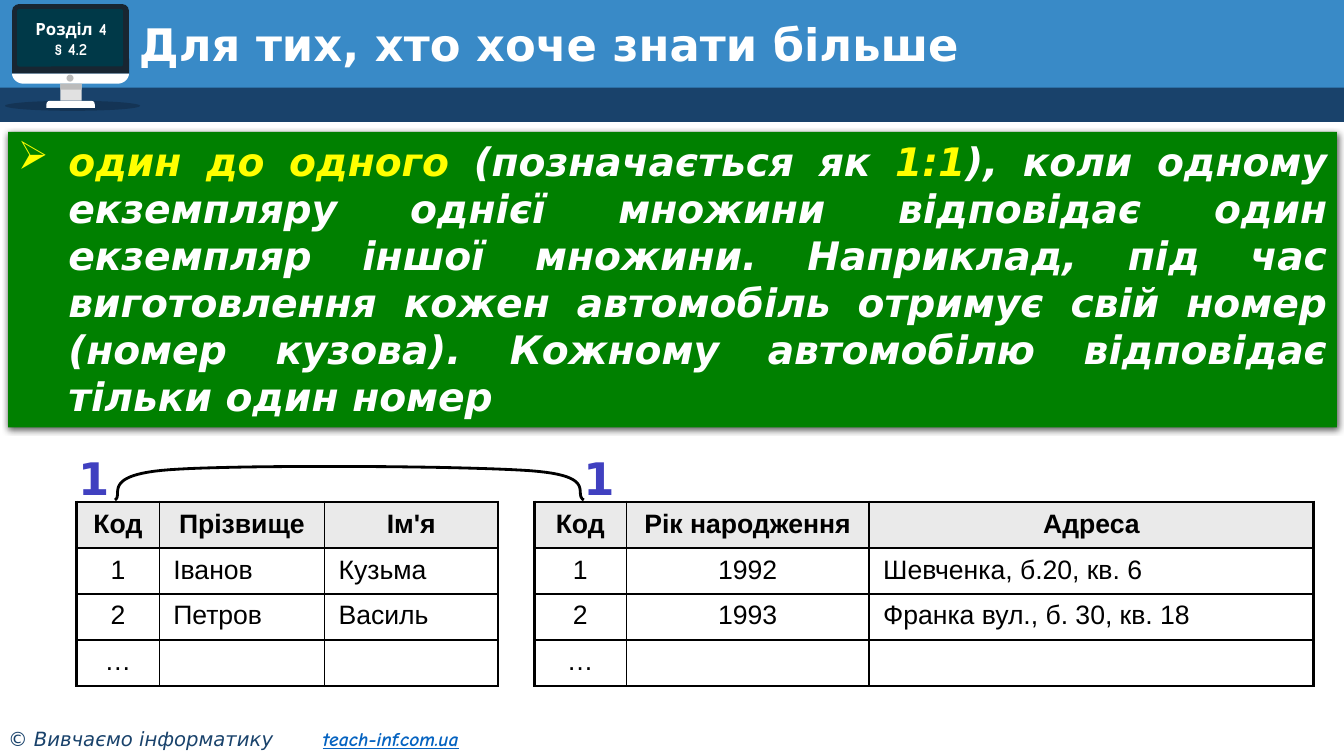
from lxml.etree import SubElement
from pptx import Presentation
from pptx.dml.color import RGBColor
from pptx.enum.shapes import MSO_SHAPE
from pptx.enum.text import MSO_ANCHOR, PP_ALIGN
from pptx.oxml import parse_xml
from pptx.oxml.ns import nsdecls, qn
from pptx.util import Inches, Pt

BLACK = RGBColor(0x00, 0x00, 0x00)
WHITE = RGBColor(0xFF, 0xFF, 0xFF)
SKY = RGBColor(0x39, 0x8A, 0xC7)
NAVY = RGBColor(0x19, 0x42, 0x6B)
FRAME = RGBColor(0x18, 0x26, 0x32)
SCREEN = RGBColor(0x00, 0x39, 0x48)
STAND = RGBColor(0xE1, 0xE1, 0xE1)
GRAY = RGBColor(0xBB, 0xBB, 0xBB)
GREEN = RGBColor(0x00, 0x80, 0x00)
YELLOW = RGBColor(0xFF, 0xFF, 0x00)
LINK = RGBColor(0x05, 0x63, 0xC1)
VIOLET = RGBColor(0x40, 0x40, 0xC0)
HEADER = RGBColor(0xEA, 0xEA, 0xEA)
SANS, COMIC, ARIAL = "DejaVu Sans", "Comic Neue", "Arial"


def add_shape(s, kind, x, y, w, h, fill, adjustments=()):
    sp = s.shapes.add_shape(kind, Inches(x), Inches(y), Inches(w), Inches(h))
    sp.shadow.inherit = False
    sp.fill.solid()
    sp.fill.fore_color.rgb = fill
    sp.line.fill.background()
    for i, value in enumerate(adjustments):
        sp.adjustments[i] = value
    return sp


def add_text_frame(s, x, y, w, h, anchor=MSO_ANCHOR.TOP, wrap=True):
    tf = s.shapes.add_textbox(Inches(x), Inches(y), Inches(w), Inches(h)).text_frame
    tf.word_wrap = wrap
    tf.vertical_anchor = anchor
    return tf


def add_run(p, text, size, font, color, bold=False, italic=False, underline=False):
    r = p.add_run()
    r.text = text
    r.font.size = Pt(size)
    r.font.name = font
    r.font.color.rgb = color
    r.font.bold = bold
    r.font.italic = italic
    r.font.underline = underline


def curve(start, control1, control2, end, steps=24):
    points = []
    for i in range(steps + 1):
        t = i / steps
        weights = ((1 - t) ** 3, 3 * t * (1 - t) ** 2, 3 * t ** 2 * (1 - t), t ** 3)
        corners = (start, control1, control2, end)
        points.append(tuple(sum(k * c[axis] for k, c in zip(weights, corners))
                            for axis in (0, 1)))
    return points


def add_outline(s, x, y, points, close):
    spots = [(Inches(x + px), Inches(y + py)) for px, py in points]
    builder = s.shapes.build_freeform(*spots[0], scale=1.0)
    builder.add_line_segments(spots[1:], close=close)
    sp = builder.convert_to_shape()
    sp.shadow.inherit = False
    return sp


def add_monitor(s, x, y):
    rounded_top = MSO_SHAPE.ROUND_2_SAME_RECTANGLE
    shade = add_shape(s, MSO_SHAPE.OVAL, x, y + 0.96, 1.34, 0.1, BLACK)
    color = shade.fill._xPr.find(qn("a:solidFill"))[0]
    SubElement(color, qn("a:alpha")).set("val", "20000")
    add_shape(s, rounded_top, x + 0.07, y, 1.16, 0.69, FRAME, (0.1, 0))
    chin = (curve((0, 0), (0, 0.05), (0.05, 0.1), (0.11, 0.1))
            + curve((1.05, 0.1), (1.11, 0.1), (1.16, 0.05), (1.16, 0)))
    sp = add_outline(s, x + 0.07, y + 0.69, chin, True)
    sp.fill.solid()
    sp.fill.fore_color.rgb = WHITE
    sp.line.fill.background()
    add_shape(s, MSO_SHAPE.RECTANGLE, x + 0.55, y + 0.79, 0.21, 0.17, STAND)
    add_shape(s, MSO_SHAPE.RECTANGLE, x + 0.55, y + 0.79, 0.21, 0.06, GRAY)
    add_shape(s, rounded_top, x + 0.41, y + 0.96, 0.48, 0.07, WHITE, (0.5, 0))
    add_shape(s, MSO_SHAPE.OVAL, x + 0.61, y + 0.7, 0.07, 0.07, GRAY)
    add_shape(s, MSO_SHAPE.ROUNDED_RECTANGLE, x + 0.12, y + 0.05, 1.05, 0.57,
              SCREEN, (0.036,))
    tf = add_text_frame(s, x + 0.08, y + 0.05, 1.15, 0.59, MSO_ANCHOR.MIDDLE)
    for p, text in ((tf.paragraphs[0], "Розділ 4"), (tf.add_paragraph(), "§ 4.2")):
        p.alignment = PP_ALIGN.CENTER
        add_run(p, text, 12, COMIC, WHITE, bold=True)


def add_header(s, x, y, w):
    add_shape(s, MSO_SHAPE.RECTANGLE, x, y, w, 0.91, SKY)
    add_shape(s, MSO_SHAPE.RECTANGLE, x, y + 0.87, w, 0.34, NAVY)
    add_monitor(s, x + 0.05, y + 0.04)
    tf = add_text_frame(s, x + 1.28, y + 0.18, 11.72, 0.58, MSO_ANCHOR.MIDDLE)
    p = tf.paragraphs[0]
    p.line_spacing = 0.9
    add_run(p, "Для тих, хто хоче знати більше", 32, SANS, WHITE, bold=True)


def add_definition(s, x, y, w, h):
    sp = add_shape(s, MSO_SHAPE.RECTANGLE, x, y, w, h, GREEN)
    sp._element.spPr.find(qn("a:effectLst")).append(parse_xml(
        f'<a:outerShdw {nsdecls("a")} blurRad="{Pt(4.5)}" dist="{Pt(1.5)}" dir="5400000" '
        'algn="t" rotWithShape="0"><a:srgbClr val="000000"><a:alpha val="63000"/>'
        '</a:srgbClr></a:outerShdw>'))
    tf = sp.text_frame
    tf.word_wrap = True
    tf.vertical_anchor = MSO_ANCHOR.TOP
    p = tf.paragraphs[0]
    p.alignment = PP_ALIGN.JUSTIFY
    pPr = p._p.get_or_add_pPr()
    pPr.set("marL", str(Inches(0.5)))
    pPr.set("indent", str(-Inches(0.5)))
    SubElement(pPr, qn("a:buChar")).set("char", "➢")
    for text, color in (
        ("один до одного ", YELLOW),
        ("(позначається як ", WHITE),
        ("1:1", YELLOW),
        ("), коли одному екземпляру однієї множини відповідає один екземпляр іншої "
         "множини. Наприклад, під час виготовлення кожен автомобіль отримує свій номер "
         "(номер кузова). Кожному автомобілю відповідає тільки один номер", WHITE),
    ):
        add_run(p, text, 28, SANS, color, bold=True, italic=True)


def set_borders(cell, left, right, top, bottom):
    tcPr = cell._tc.get_or_add_tcPr()
    for side, outer in zip("LRTB", (left, right, top, bottom)):
        tcPr.append(parse_xml(
            f'<a:ln{side} {nsdecls("a")} w="{Pt(2.25 if outer else 1)}"><a:solidFill>'
            f'<a:srgbClr val="{BLACK}"/></a:solidFill></a:ln{side}>'))


def add_data_table(s, x, y, widths, rows, centered):
    row_height = 0.455
    table = s.shapes.add_table(len(rows), len(widths), Inches(x), Inches(y),
                               Inches(sum(widths)), Inches(row_height * len(rows))).table
    table.first_row = table.horz_banding = False
    for column, width in zip(table.columns, widths):
        column.width = Inches(width)
    for i, row in enumerate(rows):
        table.rows[i].height = Inches(row_height)
        for j, text in enumerate(row):
            cell = table.cell(i, j)
            cell.margin_left = cell.margin_right = Inches(0.14)
            cell.margin_top = cell.margin_bottom = Inches(0.07)
            set_borders(cell, j == 0, j == len(row) - 1, i == 0, i == len(rows) - 1)
            if i == 0:
                cell.fill.solid()
                cell.fill.fore_color.rgb = HEADER
            else:
                cell.fill.background()
            p = cell.text_frame.paragraphs[0]
            if i == 0 or j in centered:
                p.alignment = PP_ALIGN.CENTER
            if text:
                add_run(p, text, 19, ARIAL, BLACK, bold=i == 0)


def add_relation(s, x, y):
    arc = (curve((0.38, 0.37), (0.47, 0.32), (0.23, 0.12), (0.92, 0.07))
           + curve((0.92, 0.07), (1.6, 0.02), (3.81, 0.03), (4.5, 0.08))[1:]
           + curve((4.5, 0.08), (5.18, 0.13), (4.92, 0.31), (5.03, 0.37))[1:])
    sp = add_outline(s, x, y, arc, False)
    sp.fill.background()
    sp.line.color.rgb = BLACK
    sp.line.width = Pt(2)
    for offset in (0, 5.01):
        tf = add_text_frame(s, x + offset, y, 0.34, 0.3, MSO_ANCHOR.MIDDLE, wrap=False)
        tf.margin_left = tf.margin_right = tf.margin_top = tf.margin_bottom = 0
        p = tf.paragraphs[0]
        p.alignment = PP_ALIGN.CENTER
        add_run(p, "1", 32, SANS, VIOLET, bold=True)


def add_footer(s, x, y, w, h):
    tf = add_text_frame(s, x, y, w, h)
    tf.margin_left = Inches(0.08)
    p = tf.paragraphs[0]
    tabs = SubElement(p._p.get_or_add_pPr(), qn("a:tabLst"))
    tab = SubElement(tabs, qn("a:tab"))
    tab.set("pos", str(Inches(3.12)))
    tab.set("algn", "l")
    add_run(p, "© Вивчаємо інформатику\t", 14, SANS, NAVY, italic=True)
    add_run(p, "teach-inf.com.ua", 14, COMIC, LINK, bold=True, italic=True, underline=True)


def main():
    prs = Presentation()
    prs.slide_width, prs.slide_height = Inches(13.33), Inches(7.5)
    s = prs.slides.add_slide(prs.slide_layouts[6])
    add_header(s, 0, 0, 13.33)
    add_footer(s, 0, 7.16, 5.2, 0.34)
    add_definition(s, 0.08, 1.31, 13.18, 2.93)
    add_data_table(s, 0.76, 4.98, (0.82, 1.64, 1.72), (
        ("Код", "Прізвище", "Ім'я"), ("1", "Іванов", "Кузьма"),
        ("2", "Петров", "Василь"), ("…", "", "")), (0,))
    add_data_table(s, 5.3, 4.98, (0.91, 2.41, 4.41), (
        ("Код", "Рік народження", "Адреса"), ("1", "1992", "Шевченка, б.20, кв. 6"),
        ("2", "1993", "Франка вул., б. 30, кв. 18"), ("…", "", "")), (0, 1))
    add_relation(s, 0.76, 4.59)
    prs.save("out.pptx")


if __name__ == "__main__":
    main()
